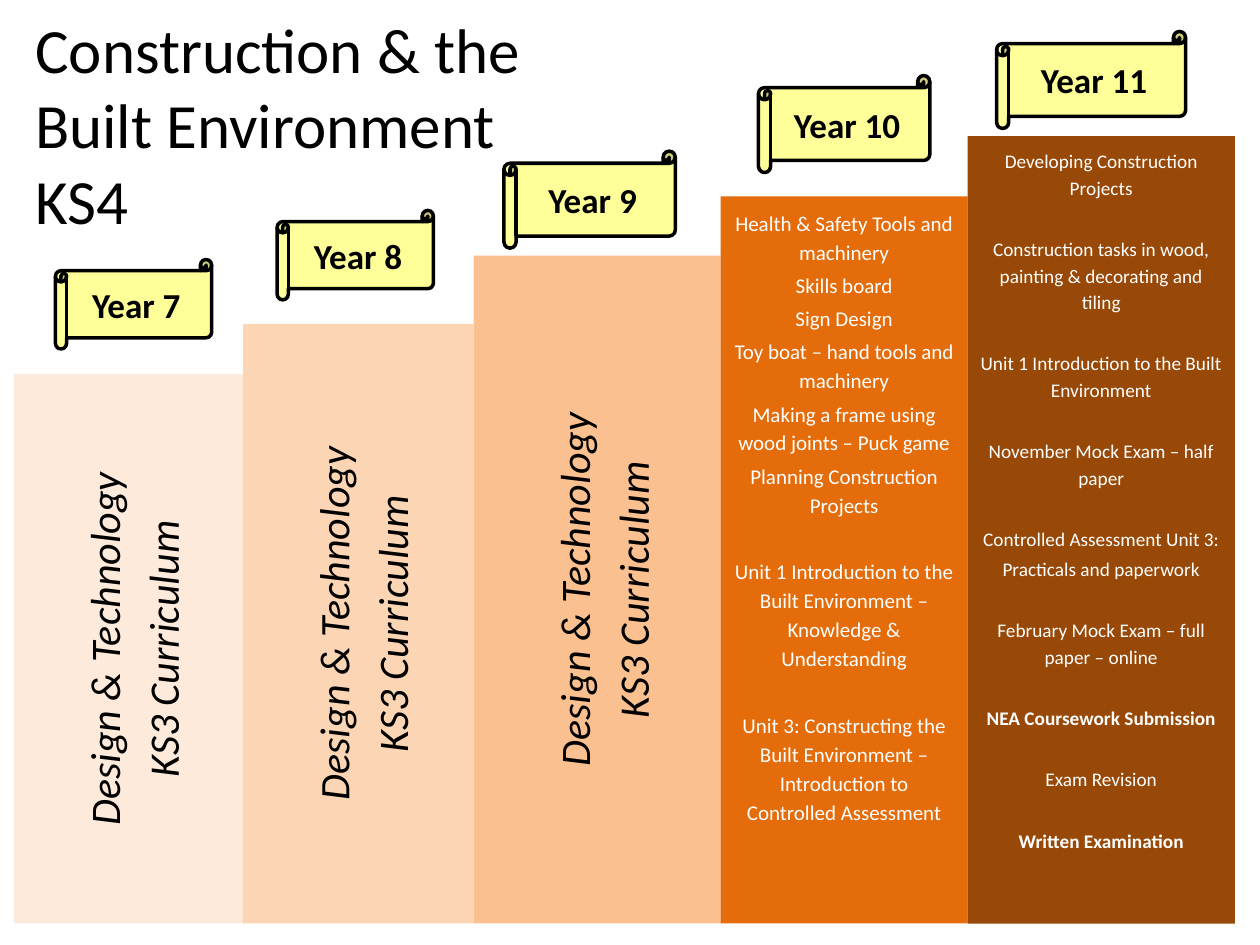
from pptx import Presentation
from pptx.dml.color import RGBColor
from pptx.enum.shapes import MSO_SHAPE
from pptx.enum.text import MSO_ANCHOR, MSO_AUTO_SIZE, PP_ALIGN
from pptx.util import Inches, Pt

RECT, SCROLL = MSO_SHAPE.RECTANGLE, MSO_SHAPE.HORIZONTAL_SCROLL
TOP, MIDDLE = MSO_ANCHOR.TOP, MSO_ANCHOR.MIDDLE
LEFT, CENTER = PP_ALIGN.LEFT, PP_ALIGN.CENTER
NO_AUTOFIT = MSO_AUTO_SIZE.NONE

THEME = {
    "font": "Calibri", "dark": "000000", "light": "FFFFFF", "scroll": "FFFF99",
    "title": 36, "year": 20, "ks3": 24, "outline": 2,
}

TITLE = "Construction & the Built Environment KS4"
KS3 = ["Design & Technology", "KS3 Curriculum"]

# Each group is set apart from the one before it by a wide gap.
YEAR_10 = [
    ["Health & Safety Tools and machinery", "Skills board", "Sign Design",
     "Toy boat – hand tools and machinery",
     "Making a frame using wood joints – Puck game",
     "Planning Construction Projects"],
    ["Unit 1 Introduction to the Built Environment – Knowledge & Understanding"],
    ["Unit 3: Constructing the Built Environment – "
     "Introduction to Controlled Assessment"],
]
YEAR_11 = [
    ["Developing Construction Projects"],
    ["Construction tasks in wood, painting & decorating and tiling"],
    ["Unit 1 Introduction to the Built Environment"],
    ["November Mock Exam – half paper"],
    ["Controlled Assessment Unit 3:", "Practicals and paperwork"],
    ["February Mock Exam – full paper – online"],
    ["NEA Coursework Submission"],
    ["Exam Revision"],
    ["Written Examination"],
]
BOLD = {"NEA Coursework Submission", "Written Examination"}

# year, column left, column top, column fill, scroll box
STEPS = [
    ("Year 7", 0.11, 2.97, "FDEADA", (0.44, 2.06, 1.24, 0.71)),
    ("Year 8", 1.93, 2.57, "FCD5B5", (2.2, 1.67, 1.24, 0.71)),
    ("Year 9", 3.76, 2.03, "FAC090", (4, 1.2, 1.36, 0.77)),
    ("Year 10", 5.72, 1.56, "E46C0A", (6.02, 0.6, 1.36, 0.77)),
    ("Year 11", 7.68, 1.08, "984807", (7.91, 0.25, 1.5, 0.77)),
]
RIGHT, BOTTOM = 9.8, 7.33
KS3_INSETS = {"Year 7": 0.51, "Year 8": 0.51, "Year 9": 0.59}
UNITS = {"Year 10": (YEAR_10, 12), "Year 11": (YEAR_11, 11)}


def style(p, size, color, align=CENTER, bold=False, italic=False):
    p.alignment = align
    for r in p.runs:
        r.font.name = THEME["font"]
        r.font.size = Pt(size)
        r.font.bold = bold
        r.font.italic = italic
        r.font.color.rgb = RGBColor.from_string(color)


def add_box(slide, kind, box, fill, anchor):
    sp = slide.shapes.add_shape(kind, *map(Inches, box))
    sp.shadow.inherit = False
    sp.fill.solid()
    sp.fill.fore_color.rgb = RGBColor.from_string(fill)
    sp.line.fill.background()
    sp.text_frame.word_wrap = True
    sp.text_frame.vertical_anchor = anchor
    return sp


def fill_ks3(tf, inset):
    """Sideways text, reading upwards, that starts at the inset."""
    tf._txBody.bodyPr.set("vert", "vert270")
    tf.margin_left = Inches(inset)
    tf.text = "\n".join(KS3)
    for i, p in enumerate(tf.paragraphs):
        style(p, THEME["ks3"], THEME["dark"], italic=True)
        p.space_before = Pt(0.2 * THEME["ks3"] if i else 0)


def fill_units(tf, groups, size):
    tf.margin_top = Inches(0.08)
    tf.text = "\n".join(line for group in groups for line in group)
    gaps = [1.8 if i == 0 else 0.2 for group in groups for i in range(len(group))]
    gaps[0] = 0
    for p, gap in zip(tf.paragraphs, gaps):
        style(p, size, THEME["light"], bold=p.text in BOLD)
        p.line_spacing = 1.15
        p.space_before = Pt(round(gap * size, 1))


def add_title(slide):
    sp = slide.shapes.title
    sp.left, sp.top, sp.width, sp.height = map(Inches, (0.18, 0.03, 4.43, 1.92))
    tf = sp.text_frame
    tf.text = TITLE
    tf.word_wrap = True
    tf.auto_size = NO_AUTOFIT
    tf.vertical_anchor = TOP
    style(tf.paragraphs[0], THEME["title"], THEME["dark"], LEFT)


def add_scroll(slide, year, box):
    sp = add_box(slide, SCROLL, box, THEME["scroll"], MIDDLE)
    sp.line.color.rgb = RGBColor.from_string(THEME["dark"])
    sp.line.width = Pt(THEME["outline"])
    sp.text_frame.text = year
    style(sp.text_frame.paragraphs[0], THEME["year"], THEME["dark"], bold=True)


def main():
    prs = Presentation()
    prs.slide_width, prs.slide_height = Inches(10), Inches(7.5)
    slide = prs.slides.add_slide(prs.slide_layouts[5])
    add_title(slide)
    rights = [step[1] for step in STEPS[1:]] + [RIGHT]
    for (year, left, top, fill, scroll), right in zip(STEPS, rights):
        box = (left, top, right - left, BOTTOM - top)
        tf = add_box(slide, RECT, box, fill, TOP).text_frame
        if year in UNITS:
            fill_units(tf, *UNITS[year])
        else:
            fill_ks3(tf, KS3_INSETS[year])
        add_scroll(slide, year, scroll)
    prs.save("out.pptx")


if __name__ == "__main__":
    main()
